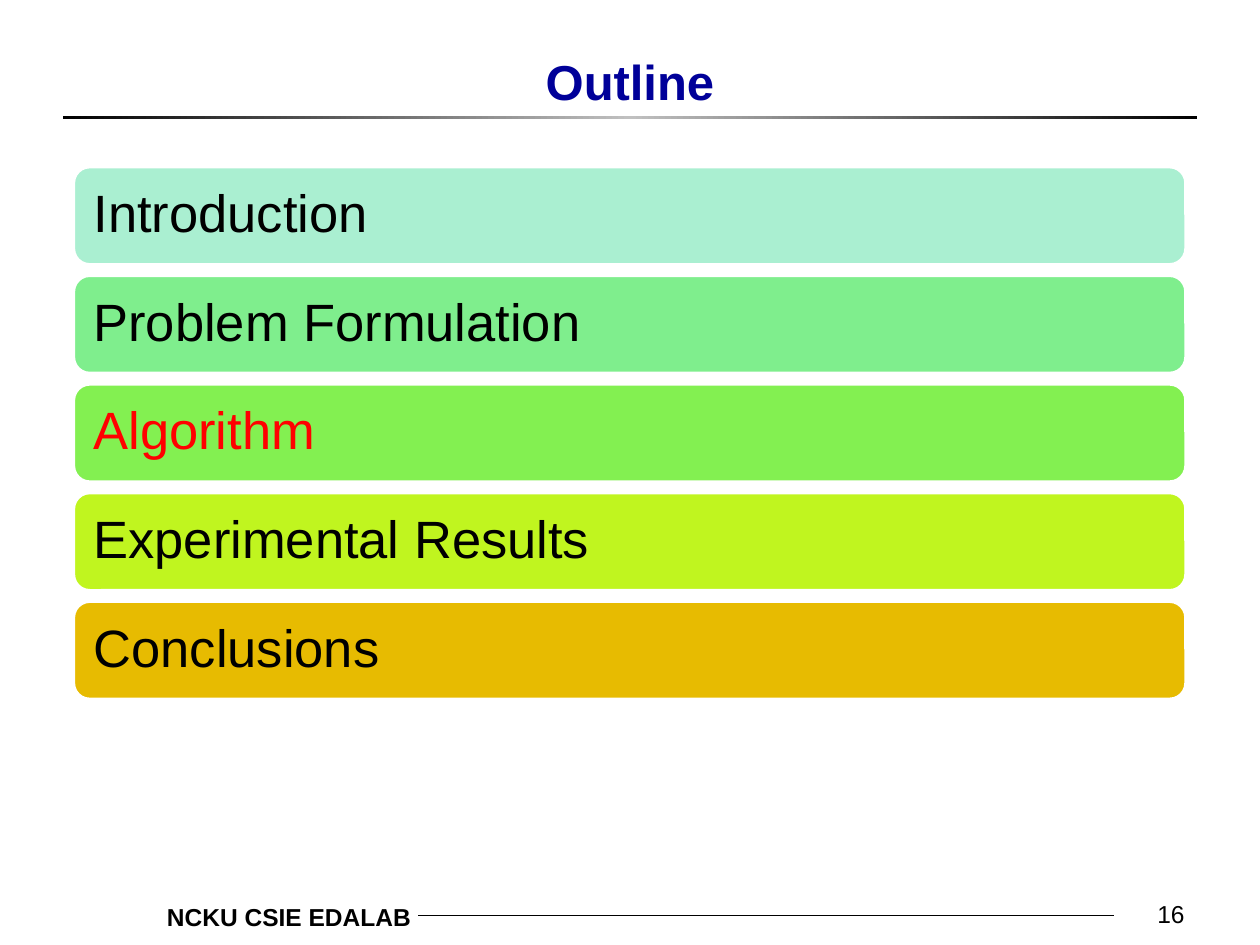
from copy import deepcopy

from lxml.etree import SubElement
from pptx import Presentation
from pptx.dml.color import RGBColor
from pptx.enum.shapes import MSO_CONNECTOR, MSO_SHAPE
from pptx.enum.text import MSO_ANCHOR, PP_ALIGN
from pptx.oxml.ns import qn
from pptx.util import Cm, Pt

BLACK = RGBColor(0x00, 0x00, 0x00)
WHITE = RGBColor(0xFF, 0xFF, 0xFF)
SILVER = RGBColor(0xC0, 0xC0, 0xC0)
NAVY = RGBColor(0x00, 0x00, 0x99)
RED = RGBColor(0xFF, 0x00, 0x00)
MINT = RGBColor(0xAA, 0xEF, 0xD1)
GREEN = RGBColor(0x7F, 0xEE, 0x8D)
GRASS = RGBColor(0x83, 0xF0, 0x51)
LIME = RGBColor(0xC0, 0xF5, 0x1F)
GOLD = RGBColor(0xE7, 0xBB, 0x01)


def add_run(frame, text, size, color, align, bold=False):
    para = frame.paragraphs[0]
    para.alignment = align
    run = para.add_run()
    run.text = text
    run.font.name = "Arial"
    run.font.size = Pt(size)
    run.font.bold = bold
    run.font.color.rgb = color
    return para


prs = Presentation()
prs.slide_width, prs.slide_height = Cm(25.4), Cm(19.05)
slide = prs.slides.add_slide(prs.slide_layouts[6])
shapes = slide.shapes

# Rule under the title, fading to silver in the middle
rule = shapes.add_shape(MSO_SHAPE.RECTANGLE, Cm(1.27), Cm(2.33), Cm(22.86), Cm(0.08))
rule.shadow.inherit = False
rule.line.fill.background()
rule.fill.gradient()
rule.fill.gradient_angle = 0
first = rule.fill.gradient_stops[0]
stop = rule._element.spPr.find(".//" + qn("a:gs"))
stop.addnext(deepcopy(stop))
for stop, (pos, color) in zip(
    rule.fill.gradient_stops, [(0, BLACK), (0.5, SILVER), (1, BLACK)]
):
    stop.position = pos
    stop.color.rgb = color

# Footer line
line = shapes.add_connector(
    MSO_CONNECTOR.STRAIGHT, Cm(8.43), Cm(18.46), Cm(22.45), Cm(18.46)
)
line.line.color.rgb = BLACK
line.line.width = Pt(0.5)
SubElement(line._element.spPr, qn("a:effectLst"))

# Title, footer and page number
labels = [
    ("Outline", 1.9, 0, 21.6, 2.34, 28, NAVY, PP_ALIGN.CENTER, True, MSO_ANCHOR.BOTTOM),
    ("NCKU CSIE EDALAB", 2.39, 18.06, 6.15, 0.86, 14, BLACK, PP_ALIGN.RIGHT, True,
     MSO_ANCHOR.TOP),
    ("16", 18.85, 17.58, 5.28, 1.27, 14, BLACK, PP_ALIGN.RIGHT, False, MSO_ANCHOR.BOTTOM),
]
for text, left, top, width, height, size, color, align, bold, anchor in labels:
    box = shapes.add_textbox(Cm(left), Cm(top), Cm(width), Cm(height))
    frame = box.text_frame
    frame.word_wrap = True
    frame.vertical_anchor = anchor
    add_run(frame, text, size, color, align, bold)

# Outline bars, the current topic in red
topics = [
    ("Introduction", MINT, BLACK),
    ("Problem Formulation", GREEN, BLACK),
    ("Algorithm", GRASS, RED),
    ("Experimental Results", LIME, BLACK),
    ("Conclusions", GOLD, BLACK),
]
for i, (text, fill, color) in enumerate(topics):
    bar = shapes.add_shape(
        MSO_SHAPE.ROUNDED_RECTANGLE, Cm(1.48), Cm(3.36 + 2.19 * i), Cm(22.43), Cm(1.98)
    )
    bar.shadow.inherit = False
    bar.fill.solid()
    bar.fill.fore_color.rgb = fill
    bar.line.color.rgb = WHITE
    bar.line.width = Pt(2)
    frame = bar.text_frame
    frame.word_wrap = True
    frame.vertical_anchor = MSO_ANCHOR.MIDDLE
    # The rounded corners inset the text by a further 0.1 cm
    frame.margin_left = frame.margin_right = Cm(0.31)
    frame.margin_top = frame.margin_bottom = Cm(0.31)
    para = add_run(frame, text, 30, color, PP_ALIGN.LEFT)
    para.line_spacing = 0.9

prs.save("out.pptx")
